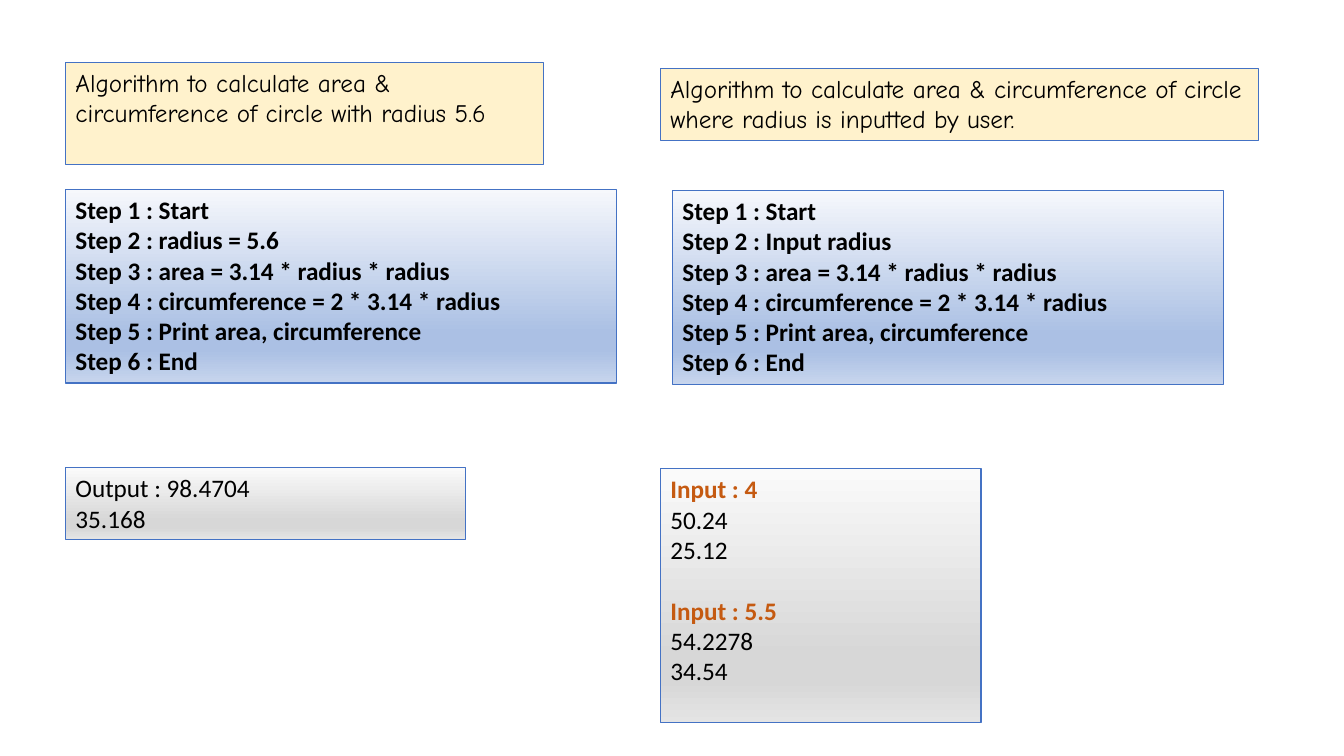
"""Build a slide comparing two circle algorithms with their outputs."""
from dataclasses import dataclass

import lxml.etree
import pptx
import pptx.dml.color
import pptx.enum.shapes
import pptx.enum.text
import pptx.oxml.ns
import pptx.slide
import pptx.util

Inches = pptx.util.Inches
Pt = pptx.util.Pt
RGBColor = pptx.dml.color.RGBColor
qn = pptx.oxml.ns.qn


@dataclass(frozen=True)
class Theme:
    """Colours, fonts and sizes of the slide."""
    cream: tuple[str, ...] = ("FFF2CC",)
    blue: tuple[str, ...] = ("F6F8FC", "ABC0E4", "ABC0E4", "C7D5ED")
    grey: tuple[str, ...] = ("FAFAFA", "D7D7D7", "D7D7D7", "E4E4E4")
    stops: tuple[int, ...] = (0, 74, 83, 100)
    border: str = "4472C4"
    ink: str = "000000"
    accent: str = "C55A11"
    title_font: str = "Comic Neue"
    body_font: str = "Calibri"
    size: float = 18
    border_width: float = 0.75
    group_gap: float = 22


THEME = Theme()


@dataclass(frozen=True)
class Line:
    """One paragraph of a panel."""
    text: str
    bold: bool = False
    color: str = THEME.ink
    before: float = 0


@dataclass(frozen=True)
class Panel:
    """A bordered box of text."""
    left: float
    top: float
    width: float
    height: float
    fill: tuple[str, ...]
    lines: list[Line]
    font: str = THEME.body_font


def steps(second: str) -> list[Line]:
    """Number the algorithm steps around the given second step."""
    actions = ["Start", second, "area = 3.14 * radius * radius",
               "circumference = 2 * 3.14 * radius",
               "Print area, circumference", "End"]
    return [Line(f"Step {i} : {action}", bold=True)
            for i, action in enumerate(actions, 1)]


def trial(value: str, results: list[str], before: float = 0) -> list[Line]:
    """List a highlighted input followed by its results."""
    return [Line(f"Input : {value}", True, THEME.accent, before),
            *map(Line, results)]


PANELS = [
    Panel(0.65, 0.62, 4.74, 1.01, THEME.cream,
          [Line("Algorithm to calculate area & circumference of circle with radius 5.6")],
          THEME.title_font),
    Panel(0.65, 1.88, 5.47, 1.92, THEME.blue, steps("radius = 5.6")),
    Panel(6.55, 0.68, 5.93, 0.71, THEME.cream,
          [Line("Algorithm to calculate area & circumference of circle where radius is inputted by user.")],
          THEME.title_font),
    Panel(6.67, 1.89, 5.47, 1.92, THEME.blue, steps("Input radius")),
    Panel(0.65, 4.64, 3.97, 0.71, THEME.grey,
          [Line("Output : 98.4704"), Line("35.168")]),
    Panel(6.55, 4.65, 3.18, 2.52, THEME.grey,
          trial("4", ["50.24", "25.12"])
          + trial("5.5", ["54.2278", "34.54"], THEME.group_gap)),
]


def paint(s: pptx.shapes.autoshape.Shape, colors: tuple[str, ...]) -> None:
    """Fill a shape with one colour or a downward gradient."""
    if len(colors) == 1:
        s.fill.solid()
        s.fill.fore_color.rgb = RGBColor.from_string(colors[0])
        return
    s.fill.gradient()
    s.fill.gradient_angle = 270
    stops = s._element.spPr.find(qn("a:gradFill")).find(qn("a:gsLst"))
    for old in list(stops):
        stops.remove(old)
    for pos, color in zip(THEME.stops, colors):
        stop = lxml.etree.SubElement(stops, qn("a:gs"), pos=str(pos * 1000))
        lxml.etree.SubElement(stop, qn("a:srgbClr"), val=color)


def draw_panel(slide: pptx.slide.Slide, panel: Panel) -> None:
    """Draw a panel and its paragraphs."""
    s = slide.shapes.add_shape(
        pptx.enum.shapes.MSO_SHAPE.RECTANGLE, Inches(panel.left),
        Inches(panel.top), Inches(panel.width), Inches(panel.height))
    s.shadow.inherit = False
    paint(s, panel.fill)
    s.line.color.rgb = RGBColor.from_string(THEME.border)
    s.line.width = Pt(THEME.border_width)
    tf = s.text_frame
    tf.word_wrap = True
    tf.vertical_anchor = pptx.enum.text.MSO_ANCHOR.TOP
    for i, line in enumerate(panel.lines):
        p = tf.add_paragraph() if i else tf.paragraphs[0]
        p.text = line.text
        p.alignment = pptx.enum.text.PP_ALIGN.LEFT
        p.space_before = Pt(line.before)
        p.font.name = panel.font
        p.font.size = Pt(THEME.size)
        p.font.bold = line.bold
        p.font.color.rgb = RGBColor.from_string(line.color)


def main() -> None:
    """Create and save the presentation."""
    prs = pptx.Presentation()
    prs.slide_width, prs.slide_height = Inches(13.33), Inches(7.5)
    slide = prs.slides.add_slide(prs.slide_layouts[6])
    for panel in PANELS:
        draw_panel(slide, panel)
    prs.save("out.pptx")


if __name__ == "__main__":
    main()
